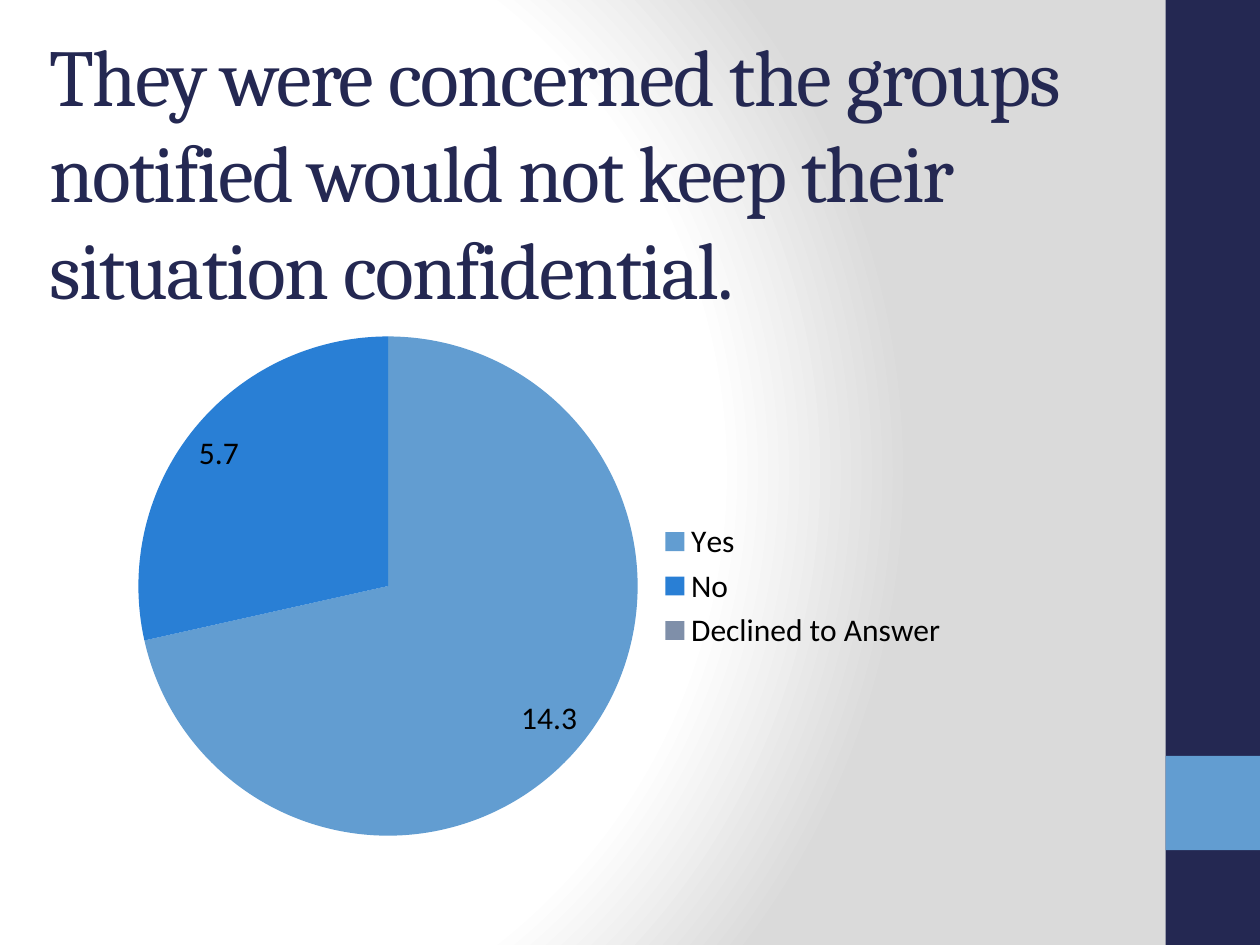
from lxml import etree
from pptx import Presentation, util as u
from pptx.chart import data as chart_data
from pptx.dml import color
from pptx.enum import chart as chart_enum, shapes, text
from pptx.oxml import ns

COLORS = {
    "navy": "242852", "sky": "629DD1", "blue": "297FD5", "slate": "7F8FA9",
    "black": "000000", "white": "FFFFFF", "gray": "DADADA",
}


def rgb(name):
    return color.RGBColor.from_string(COLORS[name])


def apply(target, values):
    for name, value in values.items():
        setattr(target, name, value)


class SlideBuilder:
    title_font = {"name": "Cambria", "size": u.Pt(46), "bold": False}
    chart_font = {"name": "Calibri", "size": u.Pt(18), "bold": False}

    def __init__(self, presentation):
        self.slide = presentation.slides.add_slide(presentation.slide_layouts[5])

    def background(self, stops, focus):
        fill = self.slide.background.fill
        fill.solid()
        solid = self.slide.background._cSld.find(".//" + ns.qn("a:solidFill"))
        gradient = etree.Element(ns.qn("a:gradFill"), rotWithShape="1")
        stop_list = etree.SubElement(gradient, ns.qn("a:gsLst"))
        for position, name in stops:
            stop = etree.SubElement(stop_list, ns.qn("a:gs"), pos=str(position * 1000))
            etree.SubElement(stop, ns.qn("a:srgbClr"), val=COLORS[name])
        path = etree.SubElement(gradient, ns.qn("a:path"), {"path": "circle"})
        edges = {side: str(percent * 1000) for side, percent in zip("ltrb", focus)}
        etree.SubElement(path, ns.qn("a:fillToRect"), edges)
        solid.getparent().replace(solid, gradient)

    def bar(self, left, top, width, height, fill):
        shape = self.slide.shapes.add_shape(
            shapes.MSO_SHAPE.RECTANGLE, *map(u.Cm, (left, top, width, height)))
        shape.shadow.inherit = False
        shape.fill.solid()
        shape.fill.fore_color.rgb = rgb(fill)
        shape.line.fill.background()

    def title(self, wording, left, top, width, height):
        shape = self.slide.shapes.title
        apply(shape, {"left": u.Cm(left), "top": u.Cm(top),
                      "width": u.Cm(width), "height": u.Cm(height)})
        frame = shape.text_frame
        apply(frame, {"text": wording, "word_wrap": True,
                      "auto_size": text.MSO_AUTO_SIZE.NONE,
                      "vertical_anchor": text.MSO_ANCHOR.MIDDLE})
        paragraph = frame.paragraphs[0]
        paragraph.alignment = text.PP_ALIGN.LEFT
        run = paragraph.runs[0]
        apply(run.font, self.title_font)
        run.font.color.rgb = rgb("navy")
        run._r.get_or_add_rPr().set("spc", "-100")

    def pie(self, slices, left, top, width, height):
        data = chart_data.CategoryChartData()
        data.categories = [category for category, _, _ in slices]
        data.add_series("Series 1", [value for _, value, _ in slices])
        chart = self.slide.shapes.add_chart(
            chart_enum.XL_CHART_TYPE.PIE,
            *map(u.Cm, (left, top, width, height)), data).chart
        apply(chart, {"has_title": False, "has_legend": True})
        apply(chart.font, self.chart_font)
        chart.font.color.rgb = rgb("black")
        apply(chart.legend, {"position": chart_enum.XL_LEGEND_POSITION.RIGHT,
                             "include_in_layout": False})
        plot = chart.plots[0]
        apply(plot, {"vary_by_categories": True, "has_data_labels": True})
        apply(plot.data_labels, {
            "show_value": True, "show_percentage": False,
            "number_format": "0.0;;", "number_format_is_linked": False,
            "position": chart_enum.XL_LABEL_POSITION.INSIDE_END})
        for index, (_, _, name) in enumerate(slices):
            fill = plot.series[0].points[index].format.fill
            fill.solid()
            fill.fore_color.rgb = rgb(name)


def main():
    presentation = Presentation()
    apply(presentation, {"slide_width": u.Cm(25.4), "slide_height": u.Cm(19.05)})
    builder = SlideBuilder(presentation)
    builder.background([(0, "white"), (75, "white"), (100, "gray")], (20, 50, 100, 50))
    builder.bar(23.5, 0, 1.9, 19.05, "navy")
    builder.bar(23.5, 15.24, 1.9, 1.9, "sky")
    builder.title("They were concerned the groups notified would not keep "
                  "their situation confidential.", 0.74, 1.85, 22.25, 3.18)
    builder.pie([("Yes", 14.3, "sky"), ("No", 5.7, "blue"),
                 ("Declined to Answer", 0, "slate")], 2.44, 6.2, 16.94, 11.23)
    presentation.save("out.pptx")


if __name__ == "__main__":
    main()
